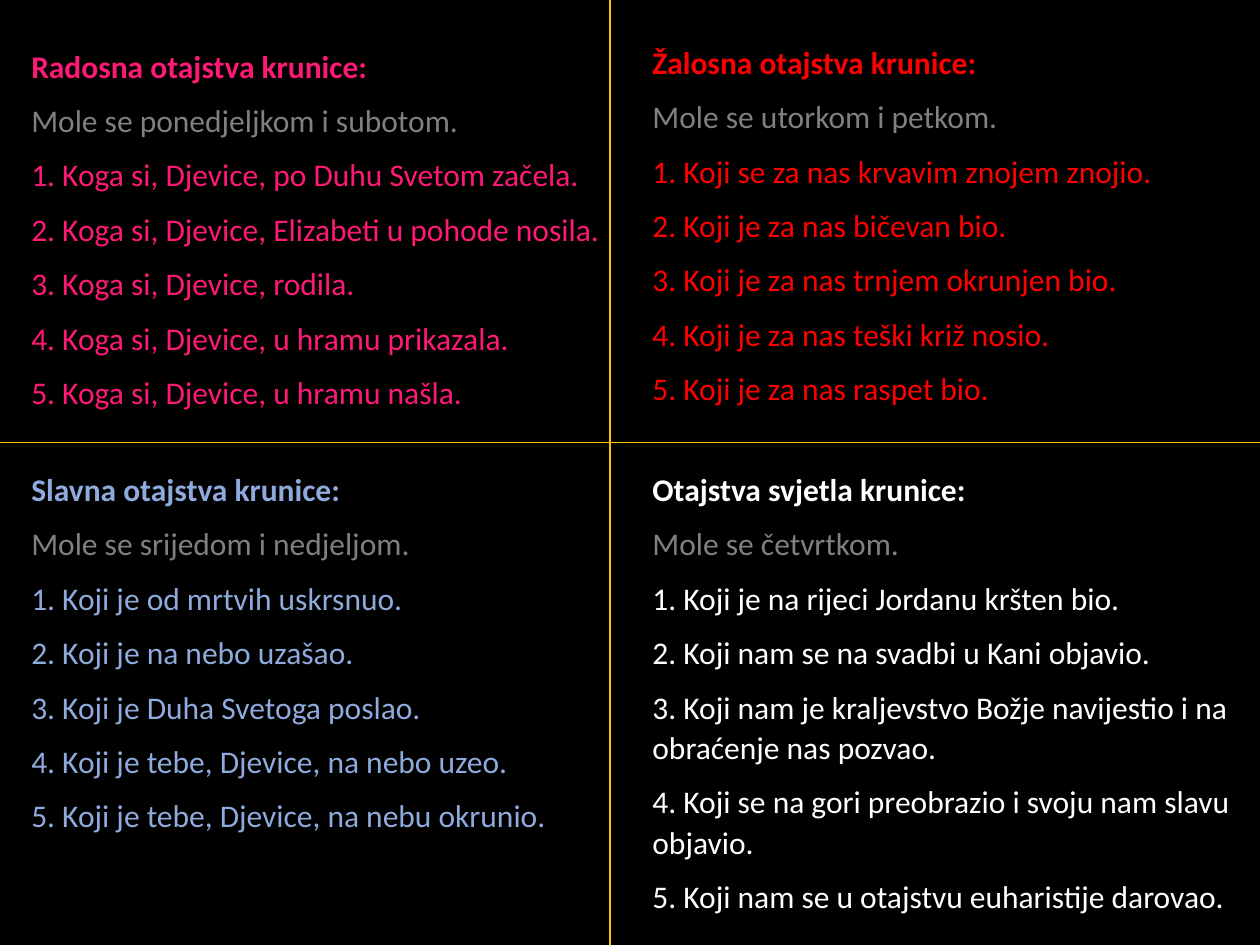
from lxml import etree
from pptx import Presentation
from pptx.dml.color import RGBColor
from pptx.enum.shapes import MSO_CONNECTOR
from pptx.enum.text import MSO_AUTO_SIZE
from pptx.oxml.ns import qn
from pptx.util import Inches, Pt

STRAIGHT = MSO_CONNECTOR.STRAIGHT
GROW = MSO_AUTO_SIZE.SHAPE_TO_FIT_TEXT

COLORS = {
    "background": "000000",
    "joyful": "FF1976",
    "sorrowful": "FF0000",
    "glorious": "8FAADC",
    "luminous": "FFFFFF",
    "days": "808080",
    "divider": "FFC000",
}
PARAGRAPH_FORMAT = {"line_spacing": 1.07, "space_before": Pt(0), "space_after": Pt(8)}
FONT_FORMAT = {"name": "Calibri", "size": Pt(18)}
LEFT, RIGHT = 0.15, 5.08
COLUMN_WIDTH = 5

mysteries = [
    ("joyful", LEFT, 0.3, 3.04, "Radosna otajstva krunice:", "Mole se ponedjeljkom i subotom.", [
        "Koga si, Djevice, po Duhu Svetom začela.",
        "Koga si, Djevice, Elizabeti u pohode nosila.",
        "Koga si, Djevice, rodila.",
        "Koga si, Djevice, u hramu prikazala.",
        "Koga si, Djevice, u hramu našla.",
    ]),
    ("sorrowful", RIGHT, 0.27, 3.04, "Žalosna otajstva krunice:", "Mole se utorkom i petkom.", [
        "Koji se za nas krvavim znojem znojio.",
        "Koji je za nas bičevan bio.",
        "Koji je za nas trnjem okrunjen bio.",
        "Koji je za nas teški križ nosio.",
        "Koji je za nas raspet bio.",
    ]),
    ("glorious", LEFT, 3.66, 3.04, "Slavna otajstva krunice:", "Mole se srijedom i nedjeljom.", [
        "Koji je od mrtvih uskrsnuo.",
        "Koji je na nebo uzašao.",
        "Koji je Duha Svetoga poslao.",
        "Koji je tebe, Djevice, na nebo uzeo.",
        "Koji je tebe, Djevice, na nebu okrunio.",
    ]),
    ("luminous", RIGHT, 3.66, 3.69, "Otajstva svjetla krunice:", "Mole se četvrtkom.", [
        "Koji je na rijeci Jordanu kršten bio.",
        "Koji nam se na svadbi u Kani objavio.",
        "Koji nam je kraljevstvo Božje navijestio i na obraćenje nas pozvao.",
        "Koji se na gori preobrazio i svoju nam slavu objavio.",
        "Koji nam se u otajstvu euharistije darovao.",
    ]),
]
dividers = [(4.84, 0, 4.84, 7.5, 1), (0, 3.51, 10, 3.51, 0.5)]

prs = Presentation()
prs.slide_width, prs.slide_height = Inches(10), Inches(7.5)
slide = prs.slides.add_slide(prs.slide_layouts[6])
slide.background.fill.solid()
slide.background.fill.fore_color.rgb = RGBColor.from_string(COLORS["background"])

for group, left, top, height, heading, days, verses in mysteries:
    prayer = slide.shapes.add_textbox(
        Inches(left), Inches(top), Inches(COLUMN_WIDTH), Inches(height)
    ).text_frame
    prayer.word_wrap = True
    prayer.auto_size = GROW
    lines = [(heading, group, True), (days, "days", False)]
    lines += [(f"{number}. {verse}", group, False) for number, verse in enumerate(verses, 1)]
    for index, (words, color, bold) in enumerate(lines):
        line = prayer.add_paragraph() if index else prayer.paragraphs[0]
        for attribute, value in PARAGRAPH_FORMAT.items():
            setattr(line, attribute, value)
        run = line.add_run()
        run.text = words
        for attribute, value in FONT_FORMAT.items():
            setattr(run.font, attribute, value)
        run.font.bold = bold
        run.font.color.rgb = RGBColor.from_string(COLORS[color])

for x1, y1, x2, y2, weight in dividers:
    divider = slide.shapes.add_connector(STRAIGHT, Inches(x1), Inches(y1), Inches(x2), Inches(y2))
    divider.line.color.rgb = RGBColor.from_string(COLORS["divider"])
    divider.line.width = Pt(weight)
    etree.SubElement(divider._element.spPr, qn("a:effectLst"))

prs.save("out.pptx")
